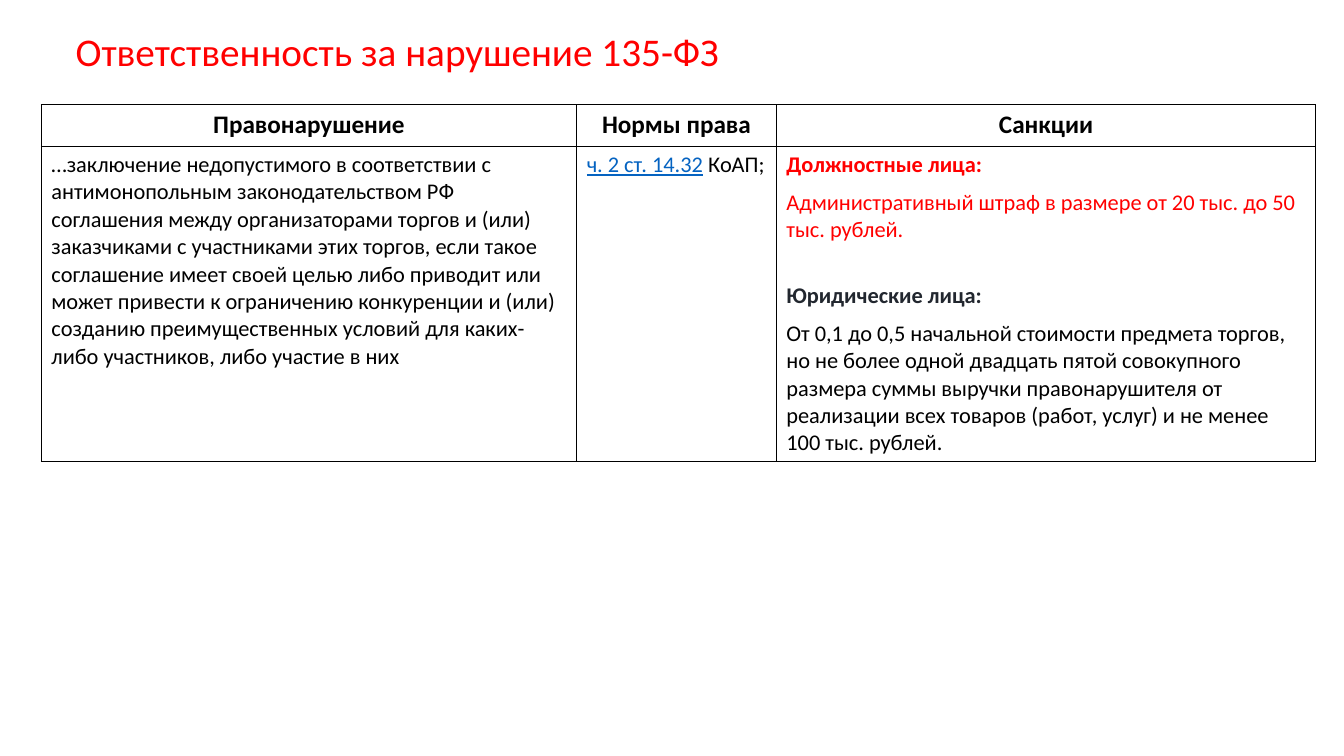
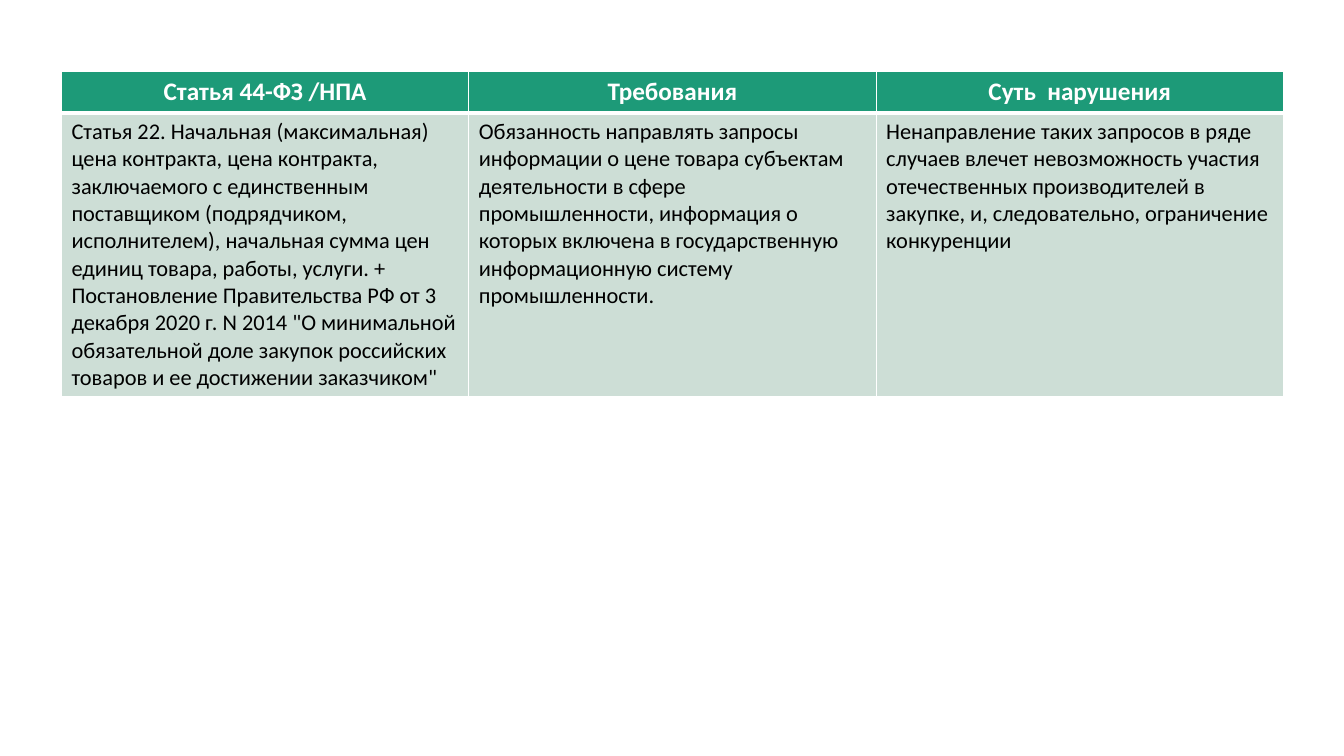
from lxml.etree import SubElement, Element
from pptx import Presentation
from pptx.dml.color import RGBColor
from pptx.enum.text import MSO_ANCHOR as ANCHOR, PP_ALIGN as ALIGN
from pptx.oxml.ns import qn
from pptx.util import Emu, Pt

PX = 9144
FONT = "Calibri"
RED, BLACK, WHITE = "FF0000", "000000", "FFFFFF"
INK, BLUE, GREEN, MINT = "22272F", "0563C1", "1D9A78", "CDDED6"

HEAD = {"size": Pt(18), "bold": True}
BODY = {"size": Pt(16), "bold": False}
SPACED = {"space_before": Pt(3.8), "space_after": Pt(3.8)}
SECTION = SPACED | {"space_before": Pt(23.3)}
CENTERED = {"alignment": ALIGN.CENTER}


def rgb(value):
    return RGBColor.from_string(value)


def px(*values):
    return [Emu(v * PX) for v in values]


def apply(target, values):
    for name, value in values.items():
        setattr(target, name, value)


class Deck:
    """Holds the shared style and the current slide."""

    def __init__(self, width, height):
        self.prs = Presentation()
        self.prs.slide_width, self.prs.slide_height = px(width, height)
        self.s = None

    def slide(self, layout):
        self.s = self.prs.slides.add_slide(self.prs.slide_layouts.get_by_name(layout))

    def run(self, p, text, color, **fmt):
        r = p.add_run()
        r.text = text
        apply(r.font, {"name": FONT} | fmt)
        r.font.color.rgb = rgb(color)

    def title(self, text, *box):
        sp = self.s.shapes.title
        apply(sp, dict(zip(("left", "top", "width", "height"), px(*box))))
        tf = sp.text_frame
        apply(tf, {"vertical_anchor": ANCHOR.MIDDLE, "word_wrap": True})
        p = tf.paragraphs[0]
        apply(p, {"alignment": ALIGN.LEFT, "line_spacing": 0.9})
        self.run(p, text, RED, size=Pt(28))

    def borders(self, cell, color, **widths):
        tc_pr = cell._tc.get_or_add_tcPr()
        for i, side in enumerate("LRTB"):
            ln = Element(qn(f"a:ln{side}"), w=str(Pt(widths[side])))
            fill = SubElement(ln, qn("a:solidFill"))
            SubElement(fill, qn("a:srgbClr"), val=color)
            tc_pr.insert(i, ln)

    def cell(self, cell, paragraphs, fill, font):
        cell.fill.solid()
        cell.fill.fore_color.rgb = rgb(fill)
        tf = cell.text_frame
        for i, (layout, *runs) in enumerate(paragraphs):
            p = tf.add_paragraph() if i else tf.paragraphs[0]
            apply(p, layout)
            for text, color, fmt in runs:
                self.run(p, text, color, **(font | fmt))

    def table(self, left, top, cols, heights, rows, fills, line, widths):
        box = px(left, top, sum(cols), sum(heights))
        table = self.s.shapes.add_table(len(rows), len(cols), *box).table
        apply(table, {"first_row": False, "horz_banding": False})
        for col, width in zip(table.columns, px(*cols)):
            col.width = width
        for row, height in zip(table.rows, px(*heights)):
            row.height = height
        for i, row in enumerate(rows):
            for j, paragraphs in enumerate(row):
                cell = table.cell(i, j)
                self.cell(cell, paragraphs, fills[i], BODY if i else HEAD)
                self.borders(cell, line, **widths[i])


def para(text, color=BLACK, layout=SPACED, **fmt):
    return layout, (text, color, fmt)


def header(labels, color, layout=CENTERED):
    return [[para(label, color, layout)] for label in labels]


def plain(*texts):
    return [para(text, layout={}) for text in texts]


def liability(deck):
    deck.slide("Title Only")
    deck.title("Ответственность за нарушение 135-ФЗ", 65, 18, 1150, 70)
    offence = [para(
        "…заключение недопустимого в соответствии с антимонопольным "
        "законодательством РФ соглашения между организаторами торгов и (или) "
        "заказчиками с участниками этих торгов, если такое соглашение имеет "
        "своей целью либо приводит или может привести к ограничению "
        "конкуренции и (или) созданию преимущественных условий для "
        "каких-либо участников, либо участие в них")]
    norms = [(SPACED, ("ч. 2 ст. 14.32", BLUE, {"underline": True}),
              (" КоАП;", BLACK, {}))]
    sanctions = [
        para("Должностные лица:", RED, bold=True),
        para("Административный штраф в размере от 20 тыс. до 50 тыс. рублей.", RED),
        para("Юридические лица:", INK, SECTION, bold=True),
        para("От 0,1 до 0,5 начальной стоимости предмета торгов, но не более "
             "одной двадцать пятой совокупного размера суммы выручки "
             "правонарушителя от реализации всех товаров (работ, услуг) и не "
             "менее 100 тыс. рублей."),
    ]
    labels = "Правонарушение", "Нормы права", "Санкции"
    rows = [header(labels, BLACK, CENTERED | SPACED), [offence, norms, sanctions]]
    thin = dict.fromkeys("LRTB", 0.75)
    deck.table(41, 104, (531, 198, 535), (41, 312), rows,
               (WHITE, WHITE), BLACK, (thin, thin))


def violations(deck):
    deck.slide("Blank")
    article = plain(
        "Статья 22. Начальная (максимальная) цена контракта, цена контракта, "
        "заключаемого с единственным поставщиком (подрядчиком, исполнителем), "
        "начальная сумма цен единиц товара, работы, услуги. +",
        "Постановление Правительства РФ от 3 декабря 2020 г. N 2014 "
        '"О минимальной обязательной доле закупок российских товаров и ее '
        'достижении заказчиком"')
    duty = plain(
        "Обязанность направлять запросы информации о цене товара субъектам "
        "деятельности в сфере промышленности, информация о которых включена в "
        "государственную информационную систему промышленности.")
    essence = plain(
        "Ненаправление таких запросов в ряде случаев влечет невозможность "
        "участия отечественных производителей в закупке, и, следовательно, "
        "ограничение конкуренции")
    labels = "Статья 44-ФЗ /НПА", "Требования", "Суть  нарушения"
    rows = [header(labels, WHITE), [article, duty, essence]]
    thin = dict.fromkeys("LRTB", 1)
    deck.table(61, 71, (404,) * 3, (41, 280), rows,
               (GREEN, MINT), WHITE, (thin | {"B": 3}, thin | {"T": 3}))


def main():
    deck = Deck(1333, 750)
    liability(deck)
    violations(deck)
    deck.prs.save("out.pptx")


if __name__ == "__main__":
    main()
